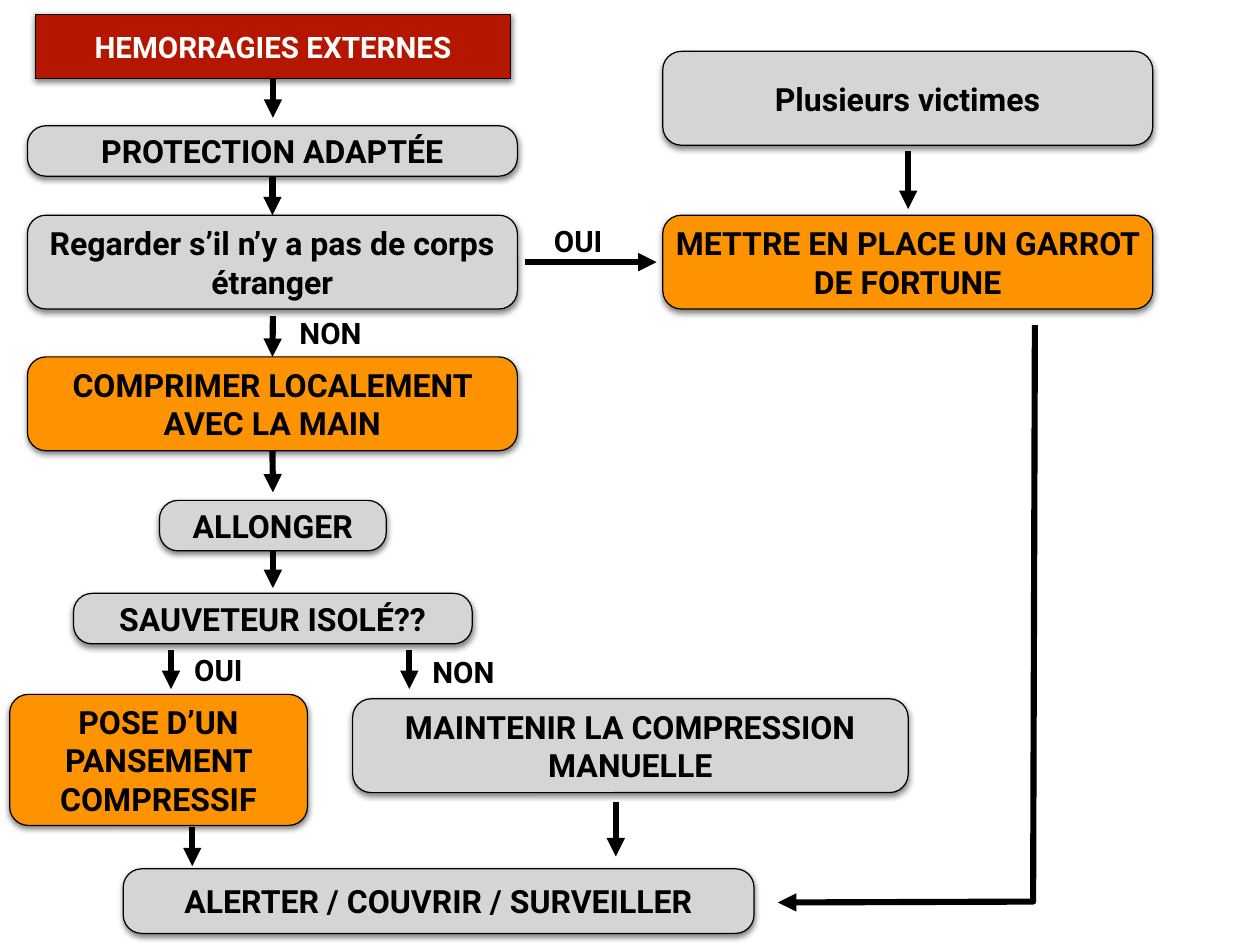
from pptx import Presentation
from pptx.dml.color import RGBColor
from pptx.enum.shapes import MSO_CONNECTOR, MSO_SHAPE
from pptx.enum.text import MSO_ANCHOR, MSO_AUTO_SIZE, PP_ALIGN
from pptx.oxml import parse_xml
from pptx.oxml.ns import nsdecls
from pptx.util import Inches, Pt

GREY, ORANGE, RED, BLACK, WHITE = "D6D5D5", "FE9301", "B51600", "000000", "FFFFFF"
BOTTOM, TOP = 2, 0


def rgb(value):
    """Turn a hex string into a colour."""
    return RGBColor.from_string(value)


class Flowchart:
    """Draws flowchart elements in one style on one slide."""

    font = "Roboto"
    radius = 0.21

    def __init__(self, slide):
        self.s = slide

    def add_text(self, sp, text, size, color=BLACK, wrap=True):
        """Put one centred bold line of text in a shape."""
        tf = sp.text_frame
        tf.word_wrap = wrap
        tf.auto_size = MSO_AUTO_SIZE.NONE if wrap else MSO_AUTO_SIZE.SHAPE_TO_FIT_TEXT
        tf.vertical_anchor = MSO_ANCHOR.MIDDLE
        tf.margin_left = tf.margin_right = Inches(0.06)
        tf.margin_top = tf.margin_bottom = Inches(0.06)
        p = tf.paragraphs[0]
        p.alignment = PP_ALIGN.CENTER
        r = p.add_run()
        r.text = text
        r.font.name = self.font
        r.font.size = Pt(size)
        r.font.bold = True
        r.font.color.rgb = rgb(color)

    def dress(self, sp, fill, radius, height):
        """Give a rounded box its corners, fill, outline and soft shadow."""
        sp.adjustments[0] = radius / height
        sp.fill.solid()
        sp.fill.fore_color.rgb = rgb(fill)
        sp.line.color.rgb = rgb(BLACK)
        sp.line.width = Pt(1)
        sp.shadow.inherit = False
        sp._element.spPr.find("{*}effectLst").append(parse_xml(
            f'<a:outerShdw {nsdecls("a")} blurRad="{Pt(5)}" dist="{Pt(2)}" dir="5400000" '
            'rotWithShape="0"><a:srgbClr val="000000"><a:alpha val="50000"/></a:srgbClr>'
            '</a:outerShdw>'))

    def title(self, text, x, y, w, h):
        """Turn the title placeholder into the red starting box."""
        sp = self.s.shapes.title
        sp.left, sp.top, sp.width, sp.height = (Inches(v) for v in (x, y, w, h))
        sp._element.spPr.append(parse_xml(
            f'<a:prstGeom {nsdecls("a")} prst="roundRect"><a:avLst/></a:prstGeom>'))
        self.dress(sp, RED, 0.3, h)
        self.add_text(sp, text, 24, WHITE)
        return sp

    def box(self, text, x, y, w, h, fill=GREY):
        """Add a rounded step box."""
        sp = self.s.shapes.add_shape(
            MSO_SHAPE.ROUNDED_RECTANGLE, Inches(x), Inches(y), Inches(w), Inches(h))
        self.dress(sp, fill, self.radius, h)
        self.add_text(sp, text, 26)
        return sp

    def label(self, text, x, y, w):
        """Add an answer beside an arrow."""
        sp = self.s.shapes.add_textbox(Inches(x), Inches(y), Inches(w), Inches(0.5))
        self.add_text(sp, text, 24, wrap=False)

    def stroke(self, sp):
        """Give a line its thick stroke and arrowhead."""
        sp.line.color.rgb = rgb(BLACK)
        sp.line.width = Pt(5)
        sp._element.spPr.find("{*}ln").append(
            parse_xml(f'<a:tailEnd {nsdecls("a")} type="triangle"/>'))

    def arrow(self, x1, y1, x2, y2, start=None, end=None):
        """Add a straight arrow, joined to the boxes it touches."""
        sp = self.s.shapes.add_connector(
            MSO_CONNECTOR.STRAIGHT, Inches(x1), Inches(y1), Inches(x2), Inches(y2))
        if start is not None:
            sp.begin_connect(start, BOTTOM)
        if end is not None:
            sp.end_connect(end, TOP)
        self.stroke(sp)
        sp._element.spPr.append(parse_xml(f'<a:effectLst {nsdecls("a")}/>'))

    def bent_arrow(self, *points):
        """Add an open arrow through several points."""
        first, *rest = [(Inches(x), Inches(y)) for x, y in points]
        builder = self.s.shapes.build_freeform(*first)
        builder.add_line_segments(rest, close=False)
        sp = builder.convert_to_shape()
        sp.fill.background()
        sp.shadow.inherit = False
        self.stroke(sp)


def main():
    """Build the external bleeding flowchart."""
    prs = Presentation()
    prs.slide_width, prs.slide_height = Inches(14.22), Inches(10.67)
    chart = Flowchart(prs.slides.add_slide(prs.slide_layouts[5]))

    left, right, wide, low, tall = 0.31, 7.48, 5.53, 0.57, 1.06
    axis = 3.08

    title = chart.title("HEMORRAGIES EXTERNES", 0.4, 0.16, 5.36, 0.73)
    protect = chart.box("PROTECTION ADAPTÉE", left, 1.42, wide, low)
    look = chart.box("Regarder s’il n’y a pas de corps étranger", left, 2.43, wide, tall)
    press = chart.box("COMPRIMER LOCALEMENT AVEC LA MAIN", left, 4.03, wide, tall, ORANGE)
    lie_down = chart.box("ALLONGER", 1.8, 5.65, 2.56, low)
    chart.box("SAUVETEUR ISOLÉ??", 0.83, 6.7, 4.5, low)
    chart.box("MAINTENIR LA COMPRESSION MANUELLE", 3.98, 7.89, 6.27, tall)
    chart.box("POSE D’UN PANSEMENT COMPRESSIF", 0.11, 7.84, 3.36, 1.48, ORANGE)
    chart.box("Plusieurs victimes", right, 0.58, wide, tall)
    chart.box("METTRE EN PLACE UN GARROT DE FORTUNE", right, 2.43, wide, tall, ORANGE)
    chart.box("ALERTER / COUVRIR / SURVEILLER", 1.39, 9.81, 7.12, 0.73)

    for y1, y2, start, end in [
        (0.89, 1.33, title, None),
        (1.99, 2.43, protect, look),
        (3.57, 4.03, None, press),
        (5.09, 5.56, press, None),
        (6.22, 6.64, lie_down, None),
    ]:
        chart.arrow(axis, y1, axis, y2, start, end)

    for x, y1, y2 in [(1.93, 7.34, 7.78), (4.62, 7.34, 7.78), (2.17, 9.34, 9.78),
                      (6.95, 9.06, 9.67), (10.25, 1.7, 2.36)]:
        chart.arrow(x, y1, x, y2)
    chart.arrow(5.92, 2.96, 7.41, 2.96)
    chart.bent_arrow((11.68, 3.67), (11.66, 10.18), (8.78, 10.19))

    for text, x, y, w in [("OUI", 6.16, 2.47, 0.73), ("NON", 3.29, 3.51, 0.88),
                          ("OUI", 2.1, 7.31, 0.73), ("NON", 4.79, 7.33, 0.88)]:
        chart.label(text, x, y, w)

    prs.save("out.pptx")


if __name__ == "__main__":
    main()
